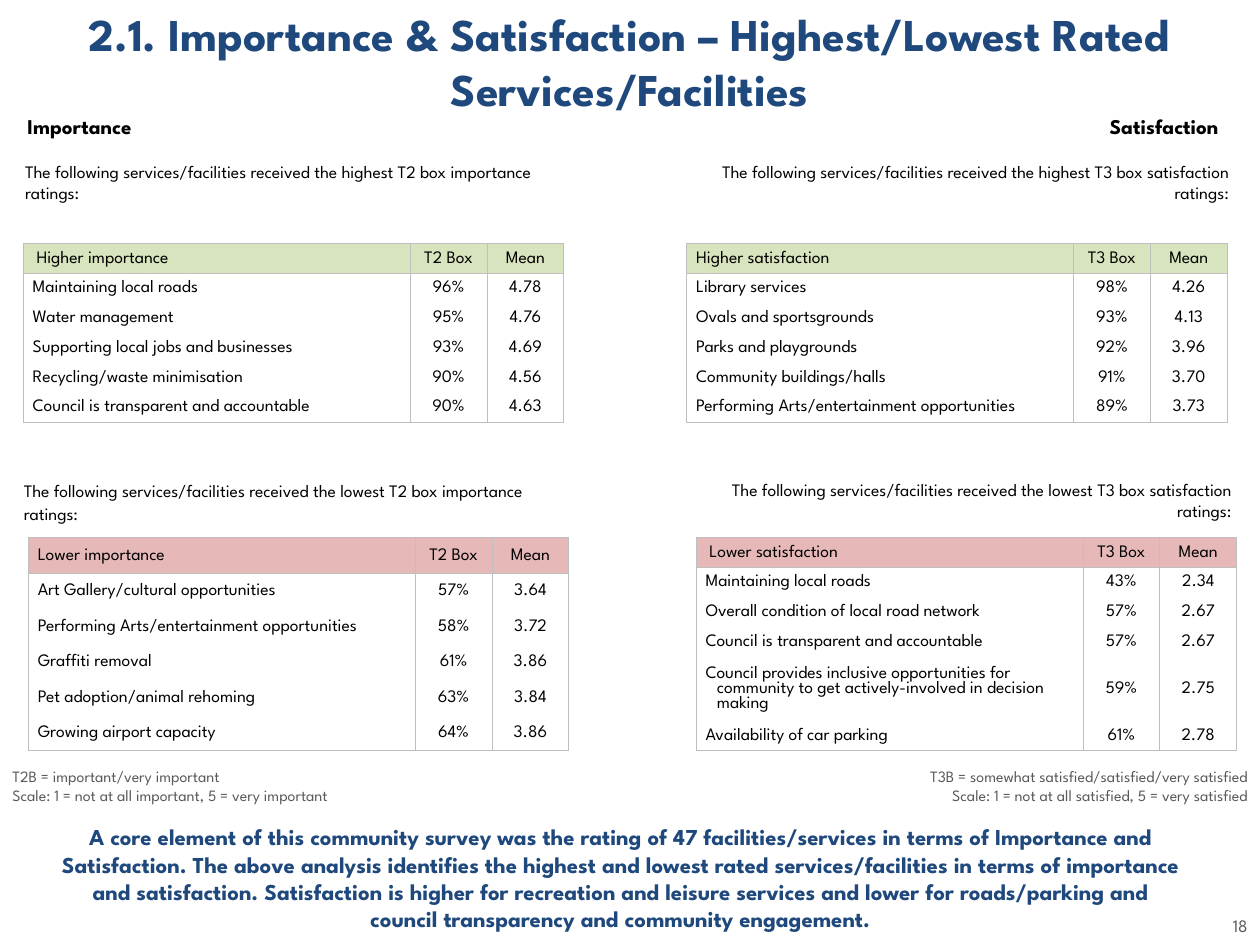
"""Build the slide on the highest and lowest rated services and facilities."""
from lxml import etree
from pptx import Presentation
from pptx.dml.color import RGBColor
from pptx.enum import text
from pptx.oxml import ns
from pptx.util import Pt

COLORS = {"heading": "1F497D", "ink": "000000", "note": "595959",
          "higher": "D7E4BD", "lower": "E6B9B8", "rule": "BFBFBF"}
FONT = "League Spartan"
PLAIN_STYLE = "{2D5ABB26-0587-4C30-8999-92F81FD0307C}"
LEFT, CENTER, RIGHT = text.PP_ALIGN.LEFT, text.PP_ALIGN.CENTER, text.PP_ALIGN.RIGHT
MIDDLE = text.MSO_ANCHOR.MIDDLE

deck = Presentation()
deck.slide_width, deck.slide_height = Pt(720), Pt(540)
col, row = deck.slide_width // 100, deck.slide_height // 75
slide = deck.slides.add_slide(deck.slide_layouts[1])


def area(x, y, width, height):
    return [round(n * unit) for n, unit in zip((x, y, width, height), (col, row, col, row))]


def write(frame, lines, size, color="ink", bold=False, align=LEFT, spacing=1.0, gap=0):
    frame.word_wrap = True
    for number, line in enumerate(lines):
        paragraph = frame.add_paragraph() if number else frame.paragraphs[0]
        paragraph.alignment, paragraph.line_spacing = align, spacing
        paragraph.space_before = paragraph.space_after = Pt(gap)
        run = paragraph.add_run()
        run.text = line
        run.font.name, run.font.size, run.font.bold = FONT, Pt(size), bold
        run.font.color.rgb = RGBColor.from_string(COLORS[color])


title, summary = slide.placeholders
headings = [
    (title, (0, 0, 100, 5.5), 26, text.MSO_ANCHOR.TOP,
     "2.1. Importance & Satisfaction – Highest/Lowest Rated Services/Facilities"),
    (summary, (3.55, 64.3, 91.3, 10.7), 13, MIDDLE,
     "A core element of this community survey was the rating of 47 facilities/services in terms of "
     "Importance and Satisfaction. The above analysis identifies the highest and lowest rated "
     "services/facilities in terms of importance and satisfaction. Satisfaction is higher for "
     "recreation and leisure services and lower for roads/parking and council transparency and "
     "community engagement."),
]
for holder, place, size, anchor, words in headings:
    holder.left, holder.top, holder.width, holder.height = area(*place)
    frame = holder.text_frame
    frame.auto_size, frame.vertical_anchor = text.MSO_AUTO_SIZE.NONE, anchor
    write(frame, [words], size, "heading", True, CENTER)
    layout = frame.paragraphs[0]._p.get_or_add_pPr()
    layout.set("marL", "0")
    layout.set("indent", "0")
    etree.SubElement(layout, ns.qn("a:buNone"))

intro = "The following services/facilities received the {} box {} ratings:"
captions = [
    ((1.2, 8.4, 21.4, 3), ["Importance"], dict(size=12, bold=True, spacing=1.07)),
    ((76.3, 8.4, 21.4, 3), ["Satisfaction"], dict(size=12, bold=True, align=RIGHT, spacing=1.07)),
    ((1, 12.3, 43.9, 4.4), [intro.format("highest T2", "importance")], dict(size=10)),
    ((54.6, 12.3, 43.9, 4.4), [intro.format("highest T3", "satisfaction")],
     dict(size=10, align=RIGHT)),
    ((0.9, 37.5, 43.9, 4.5), [intro.format("lowest T2", "importance")],
     dict(size=10, spacing=1.07, gap=3)),
    ((55.8, 37.5, 42.9, 4.4), [intro.format("lowest T3", "satisfaction")],
     dict(size=10, align=RIGHT)),
    ((0, 60.35, 31.8, 4), ["T2B = important/very important",
                           "Scale: 1 = not at all important, 5 = very important"],
     dict(size=9, color="note")),
    ((69.2, 60.35, 30.8, 4), ["T3B = somewhat satisfied/satisfied/very satisfied",
                              "Scale: 1 = not at all satisfied, 5 = very satisfied"],
     dict(size=9, color="note", align=RIGHT)),
    ((95.7, 72.1, 4.3, 2.7), ["18"], dict(size=10, color="note", align=RIGHT)),
]
for place, lines, style in captions:
    write(slide.shapes.add_textbox(*area(*place)).text_frame, lines, **style)

INCLUSIVE = ("Council provides inclusive opportunities for community to get "
             "actively-involved in decision making")
ratings = [
    ("higher", "importance", "T2 Box", (1.85, 19.3), [2.37] * 6, 1.05, [
        ("Maintaining local roads", "96%", "4.78"),
        ("Water management", "95%", "4.76"),
        ("Supporting local jobs and businesses", "93%", "4.69"),
        ("Recycling/waste minimisation", "90%", "4.56"),
        ("Council is transparent and accountable", "90%", "4.63")]),
    ("higher", "satisfaction", "T3 Box", (54.5, 19.3), [2.37] * 6, 0.75, [
        ("Library services", "98%", "4.26"),
        ("Ovals and sportsgrounds", "93%", "4.13"),
        ("Parks and playgrounds", "92%", "3.96"),
        ("Community buildings/halls", "91%", "3.70"),
        ("Performing Arts/entertainment opportunities", "89%", "3.73")]),
    ("lower", "importance", "T2 Box", (2.25, 42.65), [2.82] * 6, 0.75, [
        ("Art Gallery/cultural opportunities", "57%", "3.64"),
        ("Performing Arts/entertainment opportunities", "58%", "3.72"),
        ("Graffiti removal", "61%", "3.86"),
        ("Pet adoption/animal rehoming", "63%", "3.84"),
        ("Growing airport capacity", "64%", "3.86")]),
    ("lower", "satisfaction", "T3 Box", (55.25, 42.65), [2.37] * 4 + [5.07, 2.37], 1.05, [
        ("Maintaining local roads", "43%", "2.34"),
        ("Overall condition of local road network", "57%", "2.67"),
        ("Council is transparent and accountable", "57%", "2.67"),
        (INCLUSIVE, "59%", "2.75"),
        ("Availability of car parking", "61%", "2.78")]),
]
widths = [30.7, 6.1, 6.1]
for level, measure, box, corner, heights, inset, services in ratings:
    place = area(*corner, sum(widths), sum(heights))
    table = slide.shapes.add_table(len(heights), len(widths), *place).table
    table.first_row = table.horz_banding = False
    table._tbl.tblPr.find(ns.qn("a:tableStyleId")).text = PLAIN_STYLE
    for column, width in zip(table.columns, widths):
        column.width = round(width * col)
    for line, height in zip(table.rows, heights):
        line.height = round(height * row)
    entries = [(f"{level.title()} {measure}", box, "Mean"), *services]
    for r, entry in enumerate(entries):
        for c, words in enumerate(entry):
            cell = table.cell(r, c)
            cell.vertical_anchor = MIDDLE
            if r:
                left, right = (0.1 if c else 0.75), 0.1
            else:
                left, right = (0.7 if c else inset), 0.7
            cell.margin_left, cell.margin_right = round(left * col), round(right * col)
            cell.margin_top, cell.margin_bottom = round(0.1 * row), 0
            spacing = 0.95 if words == INCLUSIVE else 1.0 if r else 1.07
            write(cell.text_frame, [words], 10, align=CENTER if c else LEFT, spacing=spacing)
            if words == INCLUSIVE:
                hanging = cell.text_frame.paragraphs[0]._p.get_or_add_pPr()
                hanging.set("marL", str(round(0.9 * col)))
                hanging.set("indent", str(round(-0.9 * col)))
            borders = cell._tc.get_or_add_tcPr()
            ruled = "LR" + "T" * (r < 2) + "B" * (r in (0, len(services)))
            for side in "LRTB":
                edge = etree.SubElement(borders, ns.qn(f"a:ln{side}"), w=str(Pt(0.5)))
                if side in ruled:
                    ink = etree.SubElement(edge, ns.qn("a:solidFill"))
                    etree.SubElement(ink, ns.qn("a:srgbClr"), val=COLORS["rule"])
                else:
                    etree.SubElement(edge, ns.qn("a:noFill"))
            if r:
                cell.fill.background()
            else:
                cell.fill.solid()
                cell.fill.fore_color.rgb = RGBColor.from_string(COLORS[level])

deck.save("out.pptx")
